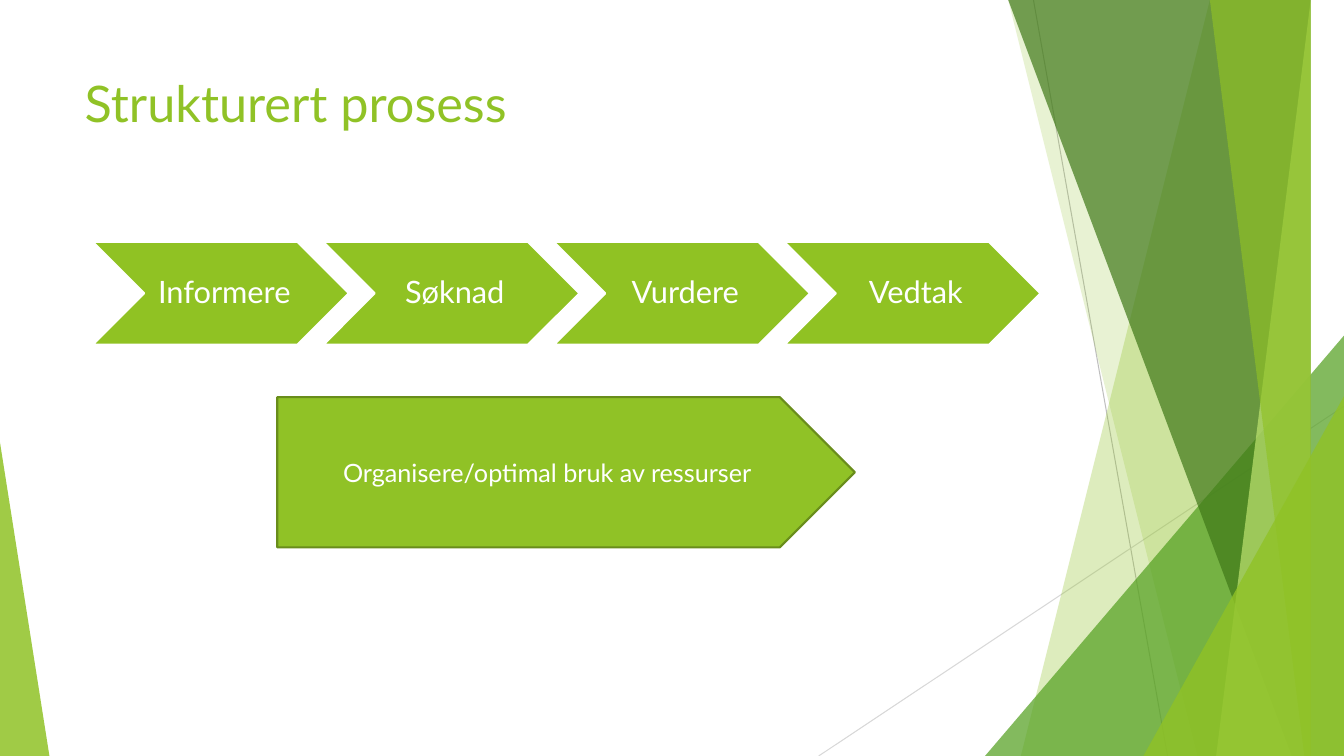
"""Build the process slide with its faceted green backdrop."""
import dataclasses

import lxml.etree
import pptx
import pptx.dml.color
import pptx.enum.shapes
import pptx.enum.text
import pptx.oxml.ns
import pptx.util

Inches = pptx.util.Inches
Shapes = pptx.enum.shapes.MSO_SHAPE
Align = pptx.enum.text.PP_ALIGN
Anchor = pptx.enum.text.MSO_ANCHOR
qn = pptx.oxml.ns.qn


@dataclasses.dataclass(frozen=True)
class Theme:
    """Colours, font and type sizes of the slide."""
    green: str = "90C226"
    chevron: str = "90C223"
    leaf: str = "54A021"
    forest: str = "3F7818"
    lime: str = "BFE471"
    outline: str = "698D1B"
    white: str = "FFFFFF"
    line_dark: str = "BFBFBF"
    line_light: str = "D8D8D8"
    font: str = "Lato"
    title_size: int = 36
    step_size: int = 22
    support_size: int = 18


THEME = Theme()


def set_values(target, values):
    """Set every attribute in the dict on the target."""
    for name, value in values.items():
        setattr(target, name, value)


def colour(code):
    """Turn a hex code into a colour."""
    return pptx.dml.color.RGBColor.from_string(code)


def paint(shape, fill, opacity=100, line=None):
    """Give a shape its fill, opacity and outline, without a shadow."""
    shape.shadow.inherit = False
    shape.fill.solid()
    shape.fill.fore_color.rgb = colour(fill)
    if opacity < 100:
        solid = shape.element.spPr.find(qn("a:solidFill"))
        alpha = lxml.etree.SubElement(solid.find(qn("a:srgbClr")), qn("a:alpha"))
        alpha.set("val", str(opacity * 1000))
    if line:
        shape.line.color.rgb = colour(line)
        shape.line.width = pptx.util.Pt(1.5)
    else:
        shape.line.fill.background()


def write(shape, text, size, text_colour, frame_format, paragraph_format):
    """Put one formatted paragraph in a shape."""
    frame = shape.text_frame
    set_values(frame, {"word_wrap": True, **frame_format})
    paragraph = frame.paragraphs[0]
    paragraph.text = text
    set_values(paragraph, paragraph_format)
    font = paragraph.runs[0].font
    set_values(font, {"name": THEME.font, "size": pptx.util.Pt(size)})
    font.color.rgb = colour(text_colour)


def add_line(slide, start, end, line_colour):
    """Draw a thin line between two points."""
    line = slide.shapes.add_connector(
        pptx.enum.shapes.MSO_CONNECTOR.STRAIGHT,
        *(Inches(value) for value in (*start, *end)))
    line.line.color.rgb = colour(line_colour)
    line.line.width = pptx.util.Pt(0.75)
    lxml.etree.SubElement(line.element.spPr, qn("a:effectLst"))


def add_facet(slide, box, top_x, bottom_x, fill, opacity):
    """Fill the box from a slanted left edge to its right side."""
    left, top, width, height = box
    right, bottom = left + width, top + height
    builder = slide.shapes.build_freeform(left + top_x, top, scale=Inches(1))
    builder.add_line_segments(
        [(right, top), (right, bottom), (left + bottom_x, bottom)])
    paint(builder.convert_to_shape(), fill, opacity)


def add_corner(slide, box, width, height, apex, fill, opacity):
    """Set a triangle in a bottom corner, right for apex 1 and left for apex 0."""
    left = box[0] + apex * (box[2] - width)
    top = box[1] + box[3] - height
    triangle = slide.shapes.add_shape(
        Shapes.ISOSCELES_TRIANGLE,
        *(Inches(value) for value in (left, top, width, height)))
    triangle.adjustments[0] = apex
    paint(triangle, fill, opacity)


def add_backdrop(slide, box):
    """Layer the lines, facets and corner triangles."""
    left, top, width, height = box
    right, bottom = left + width, top + height
    add_line(slide, (left + 10.25, top), (left + 11.58, bottom), THEME.line_dark)
    add_line(slide, (right, top + 4.03), (left + 8.12, bottom), THEME.line_light)
    add_facet(slide, box, 12.28, 10.04, THEME.green, 30)
    add_facet(slide, box, 10.5, 11.83, THEME.green, 20)
    add_corner(slide, box, 3.56, 4.17, 1, THEME.leaf, 72)
    add_facet(slide, box, 10.21, 12.91, THEME.forest, 70)
    add_facet(slide, box, 13.03, 11.92, THEME.lime, 70)
    add_facet(slide, box, 11.96, 13.18, THEME.green, 65)
    add_corner(slide, box, 1.99, 3.57, 1, THEME.green, 80)
    add_corner(slide, box, 0.49, 3.11, 0, THEME.green, 85)


def add_title(slide, box, text):
    """Move and format the title placeholder."""
    title = slide.shapes.title
    set_values(title, dict(zip(("left", "top", "width", "height"), map(Inches, box))))
    write(title, text, THEME.title_size, THEME.green,
          {"vertical_anchor": Anchor.TOP}, {"alignment": Align.LEFT})


def add_steps(slide, box, steps):
    """Spread chevrons over the box, each overlapping the next by a tenth."""
    left, top, width, height = box
    step_width = width / (1 + 0.9 * (len(steps) - 1))
    margin = Inches(0.03)
    frame_format = {"vertical_anchor": Anchor.MIDDLE, "margin_left": Inches(0.1),
                    "margin_top": margin, "margin_right": margin,
                    "margin_bottom": margin}
    for index, step in enumerate(steps):
        chevron = slide.shapes.add_shape(
            Shapes.CHEVRON, Inches(left + index * 0.9 * step_width), Inches(top),
            Inches(step_width), Inches(height))
        paint(chevron, THEME.chevron, line=THEME.white)
        write(chevron, step, THEME.step_size, THEME.white, frame_format,
              {"alignment": Align.CENTER, "line_spacing": 0.9})


def add_support(slide, box, text):
    """Draw the supporting arrow below the steps."""
    arrow = slide.shapes.add_shape(Shapes.PENTAGON, *map(Inches, box))
    paint(arrow, THEME.green, line=THEME.outline)
    write(arrow, text, THEME.support_size, THEME.white,
          {"vertical_anchor": Anchor.MIDDLE}, {"alignment": Align.CENTER})


def main():
    """Build and save the presentation."""
    presentation = pptx.Presentation()
    set_values(presentation,
               {"slide_width": Inches(13.33), "slide_height": Inches(7.5)})
    slide = presentation.slides.add_slide(presentation.slide_layouts[5])
    add_backdrop(slide, (0, 0, 13.33, 7.5))
    add_title(slide, (0.74, 0.67, 9.4, 1.44), "Strukturert prosess")
    add_steps(slide, (0.92, 2.4, 9.4, 1.02),
              ("Informere", "Søknad", "Vurdere", "Vedtak"))
    add_support(slide, (2.75, 3.94, 5.73, 1.49),
                "Organisere/optimal bruk av ressurser")
    presentation.save("out.pptx")


if __name__ == "__main__":
    main()
